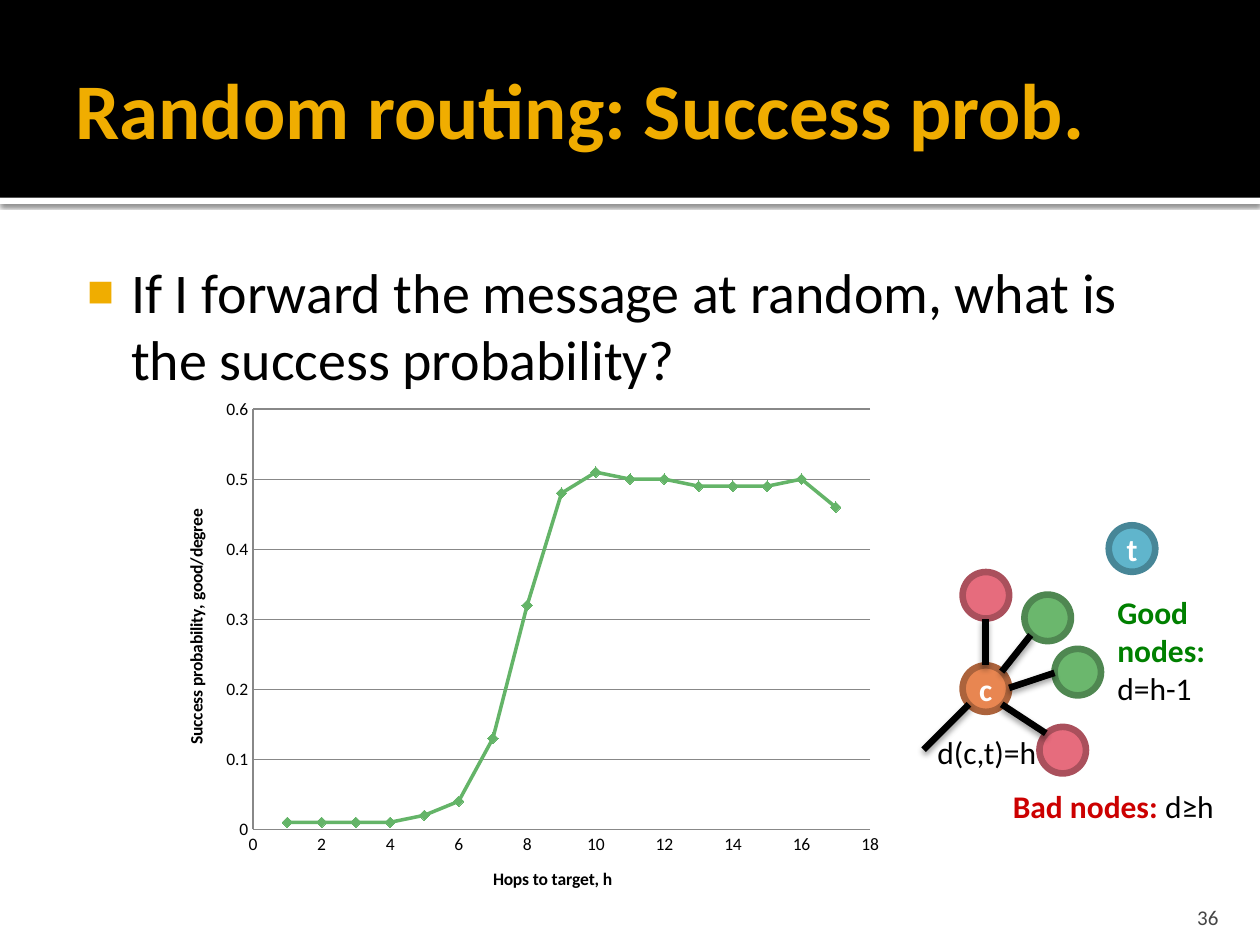
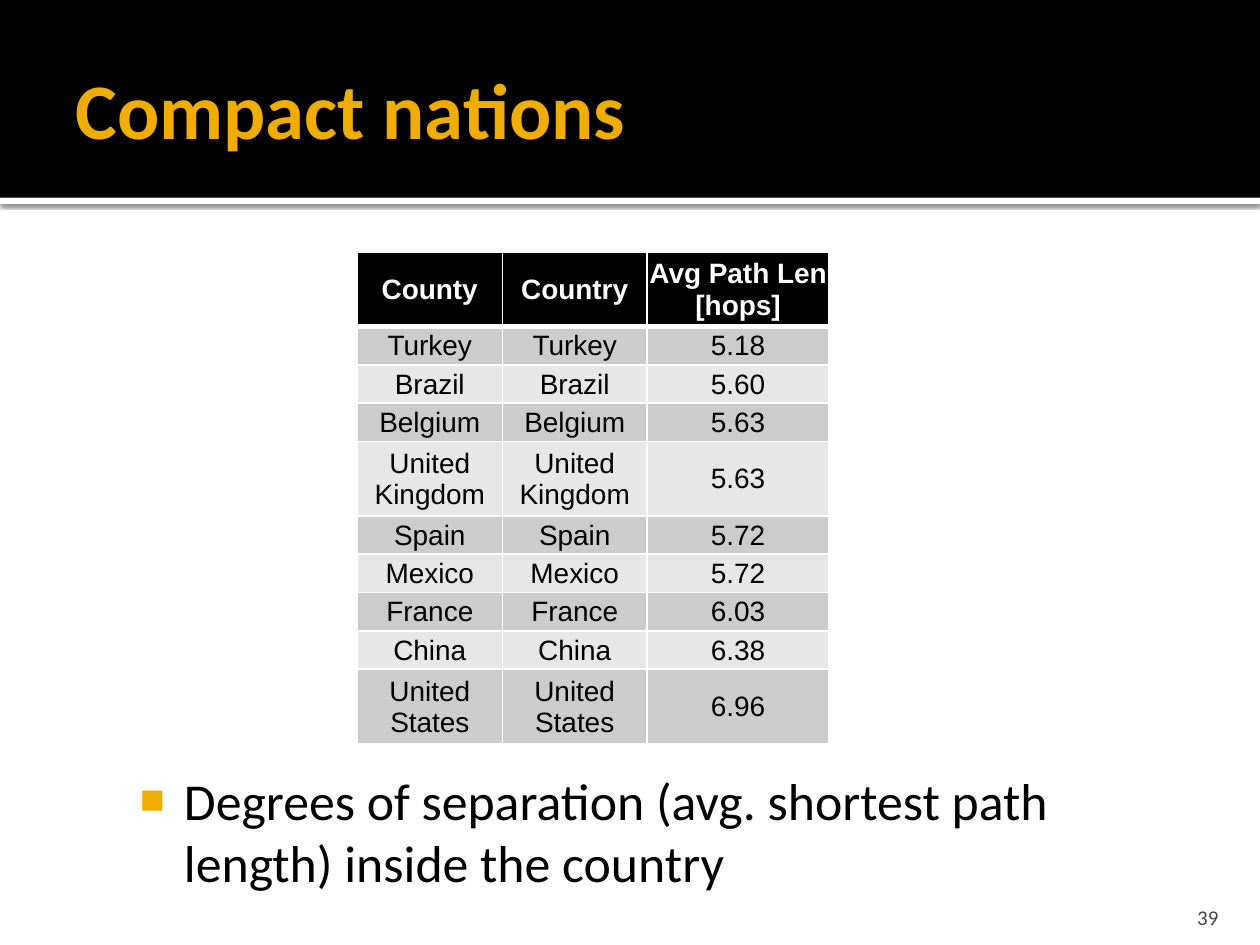
from typing import Any, NamedTuple

from pptx import Presentation
from pptx.chart.data import XyChartData
from pptx.dml.color import RGBColor
from pptx.enum import chart as ch, shapes as sh, text as tx
from pptx.oxml import ns, parse_xml
from pptx.util import Pt

BLACK, WHITE, GOLD, GRAY = "000000", "FFFFFF", "F0AD00", "454545"
GREEN, RED, CURVE, GRID = "008000", "CC0000", "64B468", "888888"
FACE = "Calibri"


class Box(NamedTuple):
    left: float
    top: float
    width: float
    height: float

    def pts(self) -> list[Any]:
        return [Pt(n) for n in self]


class Node(NamedTuple):
    left: float
    top: float
    fill: str
    rim: str
    text: str = ""


class Edge(NamedTuple):
    x1: float
    y1: float
    x2: float
    y2: float


class Bit(NamedTuple):
    text: str
    hue: str = BLACK
    bold: bool = False


class Note(NamedTuple):
    box: Box
    lines: list[list[Bit]]
    wrap: bool = True


TITLE = Box(36, 12.2, 648, 98.6)
PAGE = Box(645.8, 509.8, 57.6, 21.6)
STRIP = Box(0, 113, 720, 3.6)
BAND = Box(0, 0, 720, 113)
PLOT = Box(90, 221.8, 419.8, 300.2)
SIDE = 26.6
THICK = 3.78
BLUE_SET = ("60B5CC", "478697")
CORE_SET = ("E88651", "AC633C")
GOOD_SET = ("6BB76D", "4F8751")
BAD_SET = ("E66C7D", "AA505C")

NODES = [
    Node(633.6, 300.2, *BLUE_SET, "t"),
    Node(550.1, 380.2, *CORE_SET, "c"),
    Node(585.4, 339.8, *GOOD_SET),
    Node(550.1, 326.9, *BAD_SET),
    Node(602.6, 370.8, *GOOD_SET),
    Node(594, 415.4, *BAD_SET),
]
EDGES = [
    Edge(572.4, 383.8, 589, 362.9),
    Edge(563, 380.2, 563, 353.5),
    Edge(576.7, 393.1, 602.6, 384.5),
    Edge(572.4, 402.5, 597.6, 419),
    Edge(527.8, 428.4, 553.7, 402.5),
]
NOTES = [
    Note(Box(528.5, 415.4, 72.7, 28.8), [[Bit("d(c,t)=h")]], False),
    Note(Box(631.4, 335.5, 77.8, 73.4),
         [[Bit("Good nodes:", GREEN, True)], [Bit("d=h-1")]]),
    Note(Box(571.7, 446.4, 137.5, 28.8),
         [[Bit("Bad nodes: ", RED, True), Bit("d≥h")]]),
]
ODDS = [0.01, 0.01, 0.01, 0.01, 0.02, 0.04, 0.13, 0.32, 0.48,
        0.51, 0.5, 0.5, 0.49, 0.49, 0.49, 0.5, 0.46]
HEADS = ("County", "Country", "Avg Path Len [hops]")
HOPS = [
    ("Turkey", "5.18"), ("Brazil", "5.60"), ("Belgium", "5.63"),
    ("United Kingdom", "5.63"), ("Spain", "5.72"), ("Mexico", "5.72"),
    ("France", "6.03"), ("China", "6.38"), ("United States", "6.96"),
]


def rgb(hue: str) -> RGBColor:
    return RGBColor.from_string(hue)


def paint(part: Any, hue: str) -> None:
    part.fill.solid()
    part.fill.fore_color.rgb = rgb(hue)


def ink(font: Any, size: float, hue: str, bold: bool = False, face: str = FACE) -> None:
    font.size, font.bold, font.name = Pt(size), bold, face
    font.color.rgb = rgb(hue)


def pad(part: Any, left: float, top: float, right: float, base: float) -> None:
    part.margin_left, part.margin_top = Pt(left), Pt(top)
    part.margin_right, part.margin_bottom = Pt(right), Pt(base)


def shade(shape: Any, alpha: int, blur: float, dist: float) -> None:
    shape.element.spPr.append(parse_xml(
        f'<a:effectLst {ns.nsdecls("a")}><a:outerShdw blurRad="{Pt(blur)}" '
        f'dist="{Pt(dist)}" dir="5400000" rotWithShape="0"><a:srgbClr val="{BLACK}">'
        f'<a:alpha val="{alpha * 1000}"/></a:srgbClr></a:outerShdw></a:effectLst>'))


def place(shape: Any, box: Box) -> None:
    shape.left, shape.top, shape.width, shape.height = box.pts()


def add_bands(deck: Any, slide: Any) -> None:
    tree = deck.slide_master.shapes.element
    for i, (box, hue) in enumerate([(STRIP, WHITE), (BAND, BLACK)]):
        bar = slide.shapes.add_shape(sh.MSO_SHAPE.RECTANGLE, *box.pts())
        paint(bar, hue)
        bar.line.fill.background()
        if box is STRIP:
            shade(bar, 60, 2.5, 0.8)
        else:
            bar.shadow.inherit = False
        bar.element.nvSpPr.cNvPr.id = 20 + i
        tree.insert(2 + i, bar.element)


def add_slide(deck: Any, title: str, point: str, box: Box, size: float, page: int) -> Any:
    slide = deck.slides.add_slide(deck.slide_layouts[1])
    head, body = slide.placeholders
    place(head, TITLE)
    place(body, box)
    for shape, words in ((head, title), (body, point)):
        frame = shape.text_frame
        frame.text = words
        frame.word_wrap = True
        frame.auto_size = tx.MSO_AUTO_SIZE.NONE
        frame.paragraphs[0].alignment = tx.PP_ALIGN.LEFT
        frame.paragraphs[0].space_before = Pt(0)
    pad(head.text_frame, 7.2, 3.6, 3.6, 3.6)
    head.text_frame.vertical_anchor = tx.MSO_ANCHOR.MIDDLE
    ink(head.text_frame.paragraphs[0].runs[0].font, 45, GOLD, True)
    pad(body.text_frame, 4.3, 7.2, 7.2, 3.6)
    para = body.text_frame.paragraphs[0]
    ink(para.runs[0].font, size, BLACK)
    props = para._p.get_or_add_pPr()
    props.set("marL", str(Pt(34.6)))
    props.set("indent", str(Pt(-25.2)))
    for tag in (f'buClr {{}}><a:srgbClr val="{GOLD}"/></a:buClr>',
                'buSzPct {} val="80000"/>',
                'buFont {} typeface="Arial"/>',
                'buChar {} char="■"/>'):
        props.append(parse_xml("<a:" + tag.format(ns.nsdecls("a"))))

    foot = slide.shapes.add_textbox(*PAGE.pts()).text_frame
    foot.text = str(page)
    foot.word_wrap = True
    foot.vertical_anchor = tx.MSO_ANCHOR.BOTTOM
    pad(foot, 7.2, 3.6, 7.2, 0)
    foot.paragraphs[0].alignment = tx.PP_ALIGN.RIGHT
    ink(foot.paragraphs[0].runs[0].font, 12, GRAY)
    return slide


def set_axis(axis: Any, title: str, top: float, step: float) -> None:
    axis.minimum_scale, axis.maximum_scale, axis.major_unit = 0, top, step
    axis.major_tick_mark = axis.minor_tick_mark = ch.XL_TICK_MARK.NONE
    axis.tick_labels.number_format = "General"
    axis.tick_labels.number_format_is_linked = False
    axis.format.line.color.rgb = rgb(GRID)
    frame = axis.axis_title.text_frame
    frame.text = title
    ink(frame.paragraphs[0].runs[0].font, 10, BLACK, True)


def add_curve(slide: Any) -> None:
    data = XyChartData()
    row = data.add_series("Series 1")
    for hop, odds in enumerate(ODDS, 1):
        row.add_data_point(hop, odds)
    chart = slide.shapes.add_chart(ch.XL_CHART_TYPE.XY_SCATTER_SMOOTH, *PLOT.pts(), data).chart
    chart.has_legend = chart.has_title = False
    ink(chart.font, 10, BLACK)
    set_axis(chart.category_axis, "Hops to target, h", 18, 2)
    set_axis(chart.value_axis, "Success probability, good/degree", 0.6, 0.1)
    chart.category_axis.has_major_gridlines = False
    chart.value_axis.has_major_gridlines = True
    chart.value_axis.major_gridlines.format.line.color.rgb = rgb(GRID)
    plot = chart.plots[0]
    plot.vary_by_categories = False
    line = plot.series[0]
    line.smooth = True
    line.format.line.width = Pt(2)
    line.format.line.color.rgb = rgb(CURVE)
    line.marker.style = ch.XL_MARKER_STYLE.DIAMOND
    line.marker.size = 6
    paint(line.marker.format, CURVE)
    line.marker.format.line.color.rgb = rgb(CURVE)
    area = chart.element.xpath("c:chart/c:plotArea")[0]
    for old in area.xpath("c:layout"):
        area.remove(old)
    spots = "".join(f'<c:{k} val="{v}"/>' for k, v in (
        ("layoutTarget", "inner"), ("xMode", "edge"), ("yMode", "edge"),
        ("x", 0.13), ("y", 0.04), ("w", 0.84), ("h", 0.8)))
    area.insert(0, parse_xml(f'<c:layout {ns.nsdecls("c")}><c:manualLayout>{spots}'
                             '</c:manualLayout></c:layout>'))


def add_node(slide: Any, node: Node) -> None:
    ball = slide.shapes.add_shape(
        sh.MSO_SHAPE.OVAL, *Box(node.left, node.top, SIDE, SIDE).pts())
    ball.shadow.inherit = False
    paint(ball, node.fill)
    ball.line.color.rgb = rgb(node.rim)
    ball.line.width = Pt(THICK)
    if node.text:
        frame = ball.text_frame
        frame.text = node.text
        frame.word_wrap = False
        frame.vertical_anchor = tx.MSO_ANCHOR.MIDDLE
        frame.paragraphs[0].alignment = tx.PP_ALIGN.CENTER
        ink(frame.paragraphs[0].runs[0].font, 18, WHITE, True)


def add_edge(slide: Any, edge: Edge) -> None:
    link = slide.shapes.add_connector(sh.MSO_CONNECTOR.STRAIGHT, *[Pt(n) for n in edge])
    link.line.color.rgb = rgb(BLACK)
    link.line.width = Pt(THICK)
    shade(link, 38, 3.5, 2)


def add_note(slide: Any, note: Note) -> None:
    frame = slide.shapes.add_textbox(*note.box.pts()).text_frame
    frame.word_wrap = note.wrap
    for i, bits in enumerate(note.lines):
        para = frame.add_paragraph() if i else frame.paragraphs[0]
        for bit in bits:
            run = para.add_run()
            run.text = bit.text
            ink(run.font, 18, bit.hue, bit.bold)


def fill_cell(cell: Any, words: str, row: int) -> None:
    cell.text = words
    cell.vertical_anchor = tx.MSO_ANCHOR.MIDDLE
    pad(cell, 0.7, 0.7, 0.7, 0)
    paint(cell, BLACK if row == 0 else "CCCCCC" if row % 2 else "E7E7E7")
    para = cell.text_frame.paragraphs[0]
    para.alignment = tx.PP_ALIGN.CENTER
    ink(para.runs[0].font, 16, BLACK if row else WHITE, row == 0, "Arial")
    for i, side in enumerate("LRTB"):
        wide = 3 if (row, side) in ((0, "B"), (1, "T")) else 1
        cell._tc.get_or_add_tcPr().insert(i, parse_xml(
            f'<a:ln{side} {ns.nsdecls("a")} w="{Pt(wide)}"><a:solidFill>'
            f'<a:srgbClr val="{WHITE}"/></a:solidFill></a:ln{side}>'))


def add_grid(slide: Any) -> None:
    rows = [HEADS] + [(land, land, hops) for land, hops in HOPS]
    box = Box(204.2, 144, 269.6, 281.1)
    grid = slide.shapes.add_table(len(rows), len(HEADS), *box.pts()).table
    for col, width in zip(grid.columns, (82.8, 82.8, 104)):
        col.width = Pt(width)
    for r, words in enumerate(rows):
        tall = r == 0 or " " in words[0]
        grid.rows[r].height = Pt(42.6 if tall else 21.9)
        for c, word in enumerate(words):
            fill_cell(grid.cell(r, c), word, r)


def main() -> None:
    deck = Presentation()
    deck.slide_width, deck.slide_height = Pt(720), Pt(540)
    slide = add_slide(
        deck, "Random routing: Success prob.",
        "If I forward the message at random, what is the success probability?",
        Box(36, 139.7, 648, 364.3), 32, 36)
    add_bands(deck, slide)
    add_curve(slide)
    for node in NODES:
        add_node(slide, node)
    for edge in EDGES:
        add_edge(slide, edge)
    for note in NOTES:
        add_note(slide, note)
    slide = add_slide(
        deck, "Compact nations",
        "Degrees of separation (avg. shortest path length) inside the country",
        Box(66.2, 432, 570.2, 72), 29.6, 39)
    add_grid(slide)
    deck.save("out.pptx")


if __name__ == "__main__":
    main()
